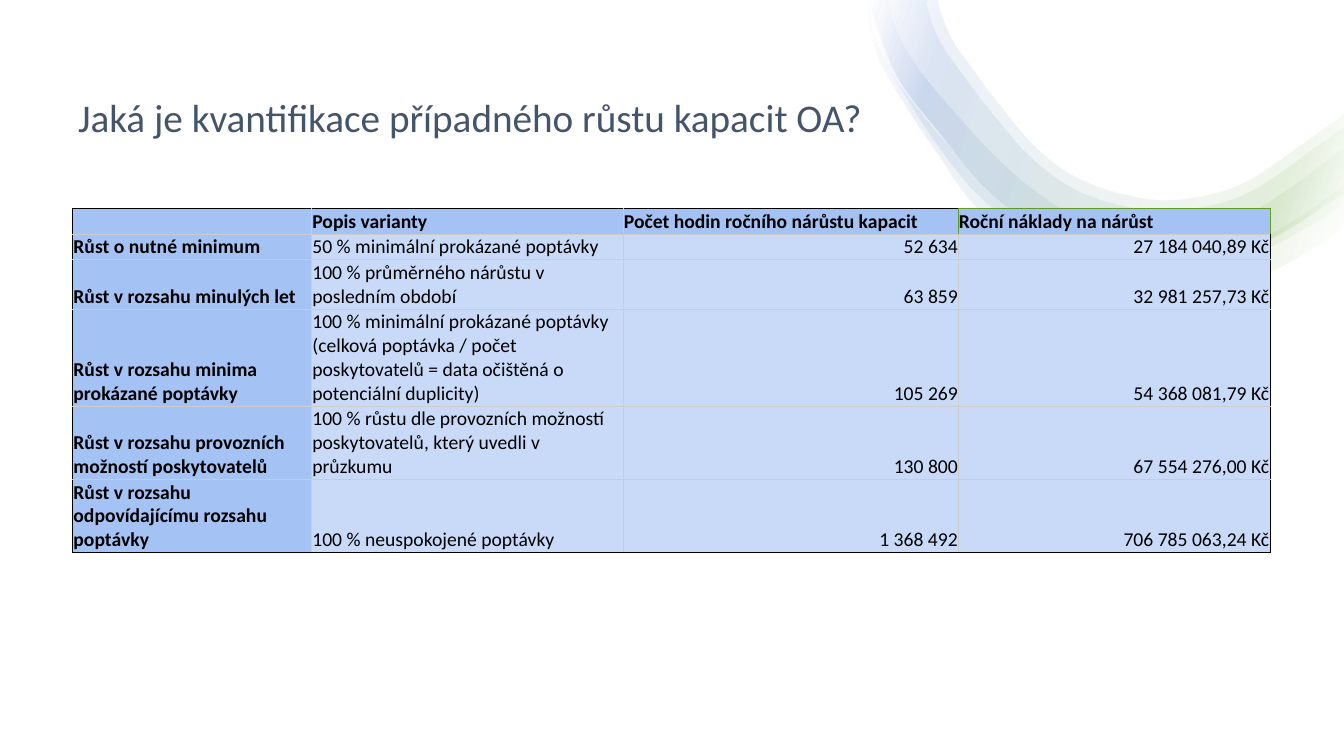
from lxml import etree
from pptx import Presentation
from pptx import util as u
from pptx.dml.color import RGBColor
from pptx.enum import shapes, text
from pptx.oxml import parse_xml
from pptx.oxml.ns import nsdecls, qn

BLACK, GREY, GREEN, WHITE = "000000", "CCCCCC", "609B22", "FFFFFF"
HEADER_FILL, BODY_FILL = "A4C2F4", "C9DAF8"
CELL_MARGIN = u.Pt(0.6)
COLUMNS = [2.37, 3.09, 3.33, 3.09]
ROWS = [0.25, 0.25, 0.48, 0.96, 0.72, 0.72]
VARIANTS = [
    ["", "Popis varianty", "Počet hodin ročního nárůstu kapacit", "Roční náklady na nárůst"],
    ["Růst o nutné minimum", "50 % minimální prokázané poptávky", "52 634", "27 184 040,89 Kč"],
    ["Růst v rozsahu minulých let", "100 % průměrného nárůstu v posledním období",
     "63 859", "32 981 257,73 Kč"],
    ["Růst v rozsahu minima prokázané poptávky",
     "100 % minimální prokázané poptávky (celková poptávka / počet poskytovatelů"
     " = data očištěná o potenciální duplicity)", "105 269", "54 368 081,79 Kč"],
    ["Růst v rozsahu provozních možností poskytovatelů",
     "100 % růstu dle provozních možností poskytovatelů, který uvedli v průzkumu",
     "130 800", "67 554 276,00 Kč"],
    ["Růst v rozsahu odpovídajícímu rozsahu poptávky", "100 % neuspokojené poptávky",
     "1 368 492", "706 785 063,24 Kč"],
]

WAVE_STOPS = [(2, WHITE), (16, "70AD47"), (85, "4472C4"), (100, WHITE)]
SHARED_EDGE = [(8.65, 0), (8.65, 0.08), (8.89, 0.75), (9.34, 1.35), (9.78, 1.87), (10.3, 2.26),
               (10.91, 2.51), (11.64, 2.6), (12.48, 2.42), (13.19, 2), (13.33, 1.9)]
WAVES = [
    ([(8.6, 0), (8.61, 0.14), (8.71, 0.56), (8.99, 1.06), (9.31, 1.54), (9.65, 2.02),
      (10.09, 2.44), (10.65, 2.73), (11.27, 2.87), (11.91, 2.88), (12.53, 2.72),
      (13.08, 2.42), (13.33, 2.23)],
     [(8.64, 0), (8.66, 0.27), (8.82, 0.67), (9.06, 1.02), (9.43, 1.47), (9.81, 1.89),
      (10.25, 2.22), (10.76, 2.45), (11.3, 2.55), (11.86, 2.55), (12.39, 2.41),
      (12.88, 2.15), (13.33, 1.83)]),
    ([(8.65, 0), (8.67, 0.24), (8.8, 0.64), (9.01, 1.01), (9.31, 1.46), (9.66, 1.9),
      (10.13, 2.27), (10.69, 2.5), (11.27, 2.62), (11.87, 2.64), (12.47, 2.5),
      (13, 2.23), (13.33, 2.01)],
     [(8.83, 0), (8.85, 0.2), (9.01, 0.54), (9.24, 0.85), (9.6, 1.27), (9.96, 1.64),
      (10.35, 1.96), (10.8, 2.2), (11.31, 2.31), (11.83, 2.3), (12.31, 2.15),
      (12.75, 1.89), (13.33, 1.46)]),
    (SHARED_EDGE,
     [(9.2, 0), (9.2, 0.08), (9.32, 0.41), (9.59, 0.8), (9.79, 1.06), (10.18, 1.52),
      (10.61, 1.85), (11.09, 2.03), (11.64, 2.09), (12.35, 1.92), (13.05, 1.45), (13.33, 1.25)]),
    (SHARED_EDGE,
     [(9.31, 0), (9.31, 0.06), (9.44, 0.39), (9.68, 0.73), (9.88, 1), (10.25, 1.44),
      (10.64, 1.74), (11.12, 1.92), (11.64, 1.98), (12.29, 1.83), (12.99, 1.37), (13.33, 1.12)]),
]


def colour(value):
    return RGBColor.from_string(value)


def apply(target, values):
    for name, value in values.items():
        setattr(target, name, value)


def write(para, words, size, shade, **values):
    span = para.add_run()
    span.text = words
    apply(span.font, {"name": "Calibri", "size": u.Pt(size), **values})
    span.font.color.rgb = colour(shade)


def add_backdrop(page, width, height):
    backdrop = page.shapes.add_shape(shapes.MSO_SHAPE.RECTANGLE, 0, 0, width, height)
    backdrop.shadow.inherit = False
    backdrop.fill.solid()
    backdrop.fill.fore_color.rgb = colour(WHITE)
    backdrop.line.fill.background()


def curve_edges(wave, corner):
    lines = list(wave.element.iter(qn("a:lnTo")))
    marks = [(int(mark.get("x")), int(mark.get("y"))) for mark in wave.element.iter(qn("a:pt"))]
    for edge in (range(corner), range(corner, len(marks))):
        for end in edge[1:]:
            start = end - 1
            before, after = max(start - 1, edge[0]), min(end + 1, edge[-1])
            handles = [
                [round(p + (r - q) / 6) for p, q, r in zip(marks[start], marks[before], marks[end])],
                [round(p - (r - q) / 6) for p, q, r in zip(marks[end], marks[start], marks[after])],
                marks[end]]
            line = lines[end - 1]
            curve = etree.Element(qn("a:cubicBezTo"))
            for x, y in handles:
                etree.SubElement(curve, qn("a:pt"), x=str(x), y=str(y))
            line.getparent().replace(line, curve)


def add_wave(page, outer, inner):
    outline = [(u.Inches(x), u.Inches(y)) for x, y in inner + outer[::-1]]
    builder = page.shapes.build_freeform(*outline[0])
    builder.add_line_segments(outline[1:], close=True)
    wave = builder.convert_to_shape()
    curve_edges(wave, len(inner))
    wave.shadow.inherit = False
    wave.line.fill.background()
    stops = "".join(
        f'<a:gs pos="{place * 1000}"><a:srgbClr val="{shade}"><a:alpha val="10000"/></a:srgbClr></a:gs>'
        for place, shade in WAVE_STOPS)
    gradient = parse_xml(
        f'<a:gradFill {nsdecls("a")} rotWithShape="1"><a:gsLst>{stops}</a:gsLst>'
        f'<a:lin ang="{200 * 60000}" scaled="0"/></a:gradFill>')
    wave.element.spPr.find(qn("a:custGeom")).addnext(gradient)


def set_title(page, words):
    title = page.shapes.title
    title.element.getparent().append(title.element)
    apply(title, {"left": u.Inches(0.58), "top": u.Inches(0.78),
                  "width": u.Inches(8.16), "height": u.Inches(0.67)})
    apply(title.text_frame, {"vertical_anchor": text.MSO_ANCHOR.BOTTOM, "word_wrap": True,
                             "auto_size": text.MSO_AUTO_SIZE.NONE})
    para = title.text_frame.paragraphs[0]
    apply(para, {"alignment": text.PP_ALIGN.CENTER, "line_spacing": 0.9})
    write(para, words, 28, "44546A")


def set_borders(cell, shades):
    properties = cell._tc.get_or_add_tcPr()
    for place, (side, shade) in enumerate(shades.items()):
        properties.insert(place, parse_xml(
            f'<a:ln{side} {nsdecls("a")} w="9525"><a:solidFill><a:srgbClr val="{shade}"/>'
            f'</a:solidFill><a:prstDash val="solid"/></a:ln{side}>'))


def border_shades(row, column):
    last_row, last_column = len(ROWS) - 1, len(COLUMNS) - 1
    shades = {"L": BLACK if column == 0 else GREY,
              "R": BLACK if column == last_column else GREY,
              "T": BLACK if row == 0 else GREY,
              "B": BLACK if row == last_row else GREY}
    if row == 0 and column == last_column:
        shades.update(L=GREEN, R=GREEN, T=GREEN)
    if row == 0 and column == last_column - 1:
        shades["R"] = GREEN
    return shades


def fill_cell(cell, words, row, column):
    heading = row == 0 or column == 0
    side = 0 if row == 0 and column == 3 else CELL_MARGIN
    apply(cell, {"margin_left": side, "margin_right": side,
                 "margin_top": CELL_MARGIN, "margin_bottom": CELL_MARGIN,
                 "vertical_anchor": text.MSO_ANCHOR.BOTTOM})
    cell.fill.solid()
    cell.fill.fore_color.rgb = colour(HEADER_FILL if heading else BODY_FILL)
    para = cell.text_frame.paragraphs[0]
    if words:
        write(para, words, 14, BLACK, bold=heading)
    else:
        etree.SubElement(para._p, qn("a:endParaRPr")).set("sz", "1400")
    if row and column >= 2:
        para.alignment = text.PP_ALIGN.RIGHT
    set_borders(cell, border_shades(row, column))


def add_variants_table(page):
    table = page.shapes.add_table(
        len(ROWS), len(COLUMNS), u.Inches(0.72), u.Inches(2.07),
        u.Inches(sum(COLUMNS)), u.Inches(sum(ROWS))).table
    apply(table, {"first_row": False, "horz_banding": False})
    for column, width in zip(table.columns, COLUMNS):
        column.width = u.Inches(width)
    for row, height in zip(table.rows, ROWS):
        row.height = u.Inches(height)
    for row, entries in enumerate(VARIANTS):
        for column, words in enumerate(entries):
            fill_cell(table.cell(row, column), words, row, column)


def main():
    deck = Presentation()
    apply(deck, {"slide_width": u.Inches(13.33), "slide_height": u.Inches(7.5)})
    page = deck.slides.add_slide(deck.slide_layouts[5])
    add_backdrop(page, deck.slide_width, deck.slide_height)
    for outer, inner in WAVES:
        add_wave(page, outer, inner)
    set_title(page, "Jaká je kvantifikace případného růstu kapacit OA?")
    add_variants_table(page)
    deck.save("out.pptx")


if __name__ == "__main__":
    main()
